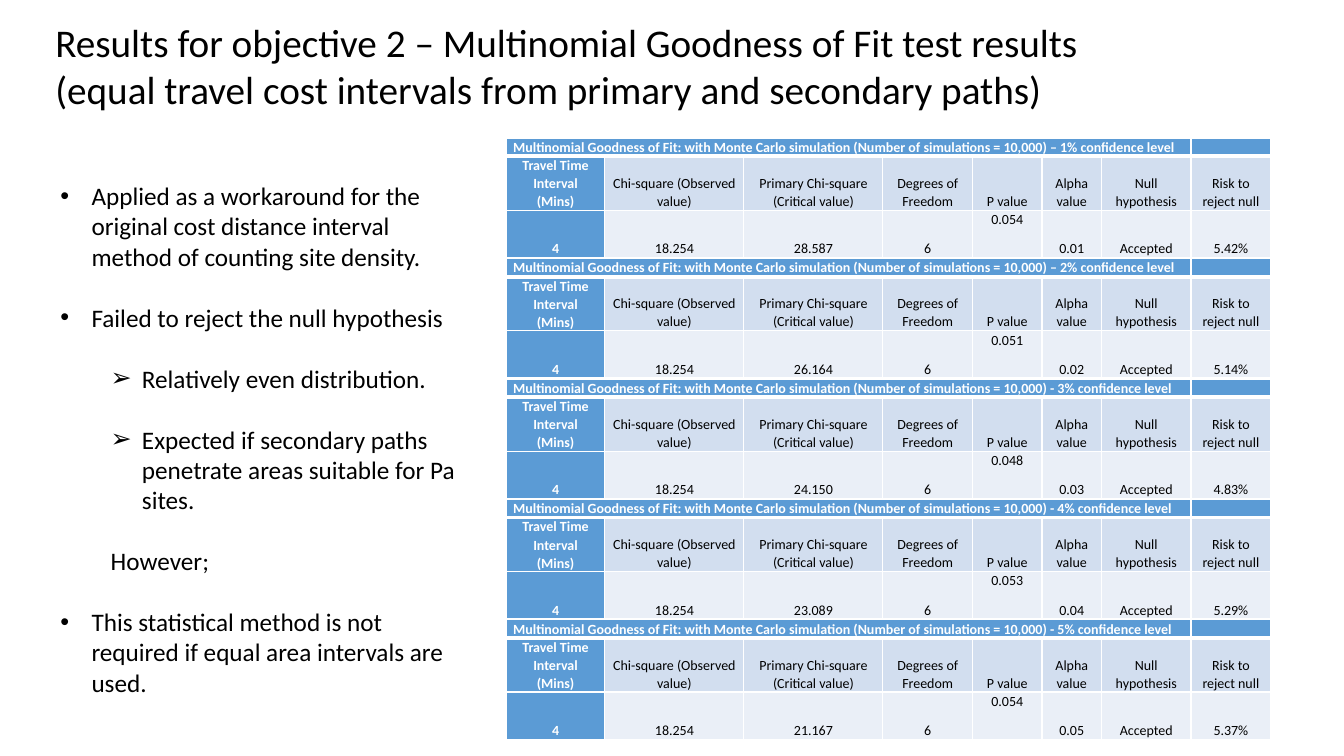
from dataclasses import dataclass

import pptx
import pptx.dml.color
import pptx.enum.text
import pptx.oxml
import pptx.oxml.ns
import pptx.util

ALIGN = pptx.enum.text.PP_ALIGN
ANCHOR = pptx.enum.text.MSO_ANCHOR


@dataclass(frozen=True)
class Theme:
    font: str = "Calibri"
    bullet_font: str = "Arial"
    title_size: int = 28
    body_size: int = 18
    table_size: int = 10
    ink: str = "000000"
    white: str = "FFFFFF"
    accent: str = "5B9BD5"
    heading_fill: str = "D2DEEF"
    value_fill: str = "EAEFF7"


def apply(target, values):
    for name, value in values.items():
        setattr(target, name, value)


def append_xml(parent, tag, index=None, **attributes):
    """Add a drawing element to parent, at the end unless an index is given."""
    element = pptx.oxml.parse_xml(f"<a:{tag} {pptx.oxml.ns.nsdecls('a')}/>")
    for name, value in attributes.items():
        element.set(name, str(value))
    parent.insert(len(parent) if index is None else index, element)
    return element


class SlideBuilder:
    """Draws on one slide; places and sizes are percentages of the slide."""

    def __init__(self, presentation, theme):
        self.presentation = presentation
        self.theme = theme
        self.slide = presentation.slides.add_slide(presentation.slide_layouts[6])

    def across(self, share):
        return round(self.presentation.slide_width * share / 100)

    def down(self, share):
        return round(self.presentation.slide_height * share / 100)

    def box(self, left, top, width, height):
        return self.across(left), self.down(top), self.across(width), self.down(height)

    def add_styled_run(self, paragraph, text, size, color, bold=False):
        run = paragraph.add_run()
        run.text = text
        apply(run.font, {"name": self.theme.font, "size": pptx.util.Pt(size), "bold": bold})
        run.font.color.rgb = pptx.dml.color.RGBColor.from_string(color)

    def text(self, place, size, items, gap=0):
        """Put (text, bullet, level, left margin in inches) items in one box."""
        frame = self.slide.shapes.add_textbox(*self.box(*place)).text_frame
        frame.word_wrap = True
        for number, (text, bullet, level, margin) in enumerate(items):
            paragraph = frame.paragraphs[0] if number == 0 else frame.add_paragraph()
            paragraph.level = level
            if gap and number:
                paragraph.space_before = pptx.util.Pt(gap)
            properties = paragraph._p.get_or_add_pPr()
            properties.set("marL", str(pptx.util.Inches(margin)))
            if bullet:
                properties.set("indent", str(-pptx.util.Inches(0.31)))
                append_xml(properties, "buFont", typeface=self.theme.bullet_font)
                append_xml(properties, "buChar", char=bullet)
            self.add_styled_run(paragraph, text, size, self.theme.ink)

    def borders(self, cell, top, bottom):
        widths = {"lnL": 1, "lnR": 1, "lnT": top, "lnB": bottom}
        properties = cell._tc.get_or_add_tcPr()
        for index, (side, width) in enumerate(widths.items()):
            line = append_xml(properties, side, index, w=pptx.util.Pt(width))
            append_xml(append_xml(line, "solidFill"), "srgbClr", val=self.theme.white)

    def cell(self, cell, text, fill, align, strong, top, bottom):
        inset = pptx.util.Inches(0.07)
        apply(cell, {"margin_left": inset, "margin_right": inset, "margin_top": 0,
                     "margin_bottom": 0, "vertical_anchor": ANCHOR.BOTTOM})
        cell.fill.solid()
        cell.fill.fore_color.rgb = pptx.dml.color.RGBColor.from_string(fill)
        self.borders(cell, top, bottom)
        paragraph = cell.text_frame.paragraphs[0]
        apply(paragraph, {"alignment": align, "line_spacing": 1.07})
        size = self.theme.table_size
        if text:
            color = self.theme.white if strong else self.theme.ink
            self.add_styled_run(paragraph, text, size, color, strong)
        else:
            append_xml(paragraph._p, "endParaRPr", sz=size * 100)

    def table(self, place, column_weights, row_shares, rows, raised_column):
        """Draw a caption row, a heading row and a value row."""
        theme = self.theme
        table = self.slide.shapes.add_table(
            len(rows), len(column_weights), *self.box(*place)).table
        apply(table, {"first_row": False, "horz_banding": False})
        for column, weight in zip(table.columns, column_weights):
            column.width = self.across(place[2] * weight / sum(column_weights))
        for row, share in zip(table.rows, row_shares):
            row.height = self.down(share)

        fills = (theme.accent, theme.heading_fill, theme.value_fill)
        for row, texts in enumerate(rows):
            for column, text in enumerate(texts):
                strong = row == 0 or column == 0
                self.cell(table.cell(row, column), text,
                          theme.accent if strong else fills[row],
                          ALIGN.CENTER if row else ALIGN.LEFT, strong,
                          top=3 if row == 1 else 1, bottom=1 if row else 3)
        table.cell(0, 0).merge(table.cell(0, len(column_weights) - 2))
        table.cell(len(rows) - 1, raised_column).margin_bottom = pptx.util.Inches(0.29)


TITLE = (
    "Results for objective 2 – Multinomial Goodness of Fit test results",
    "(equal travel cost intervals from primary and secondary paths)",
)
FINDINGS = (
    ("Applied as a workaround for the original cost distance interval method of "
     "counting site density.", "•", 0, 0.31),
    ("Failed to reject the null hypothesis", "•", 0, 0.31),
    ("Relatively even distribution.", "➢", 1, 0.81),
    ("Expected if secondary paths penetrate areas suitable for Pa sites.", "➢", 1, 0.81),
    ("However;", None, 1, 0.5),
    ("This statistical method is not required if equal area intervals are used.",
     "•", 0, 0.31),
)
CAPTION = ("Multinomial Goodness of Fit: with Monte Carlo simulation "
           "(Number of simulations = 10,000) {} {}% confidence level")
HEADINGS = ("Travel Time Interval (Mins)", "Chi-square (Observed value)",
            "Primary Chi-square (Critical value)", "Degrees of Freedom", "P value",
            "Alpha value", "Null hypothesis", "Risk to reject null")
COLUMN_WEIGHTS = (0.98, 1.38, 1.38, 0.89, 0.69, 0.59, 0.89, 0.79)
ROW_SHARES = (2.4, 7.07, 6.27)
# Dash in the caption, critical value, P value, risk
TESTS = (
    ("–", "28.587", "0.054", "5.42%"),
    ("–", "26.164", "0.051", "5.14%"),
    ("-", "24.150", "0.048", "4.83%"),
    ("-", "23.089", "0.053", "5.29%"),
    ("-", "21.167", "0.054", "5.37%"),
)


def main():
    presentation = pptx.Presentation()
    apply(presentation, {"slide_width": pptx.util.Inches(13.33),
                         "slide_height": pptx.util.Inches(7.5)})
    theme = Theme()
    builder = SlideBuilder(presentation, theme)
    builder.text((3.38, 1.73, 91.15, 13.87), theme.title_size,
                 [(line, None, 0, 0) for line in TITLE])
    first_top, pitch = 18.27, 15.93
    for index, (dash, critical, p_value, risk) in enumerate(TESTS):
        level = index + 1
        caption = (CAPTION.format(dash, level),) + ("",) * (len(HEADINGS) - 1)
        values = ("4", "18.254", critical, "6", p_value, f"0.0{level}", "Accepted", risk)
        builder.table((37.66, first_top + index * pitch, 56.89, sum(ROW_SHARES)),
                      COLUMN_WEIGHTS, ROW_SHARES, (caption, HEADINGS, values),
                      raised_column=HEADINGS.index("P value"))
    builder.text((3.75, 23.2, 31.43, 70), theme.body_size, FINDINGS, gap=22)
    presentation.save("out.pptx")


if __name__ == "__main__":
    main()
